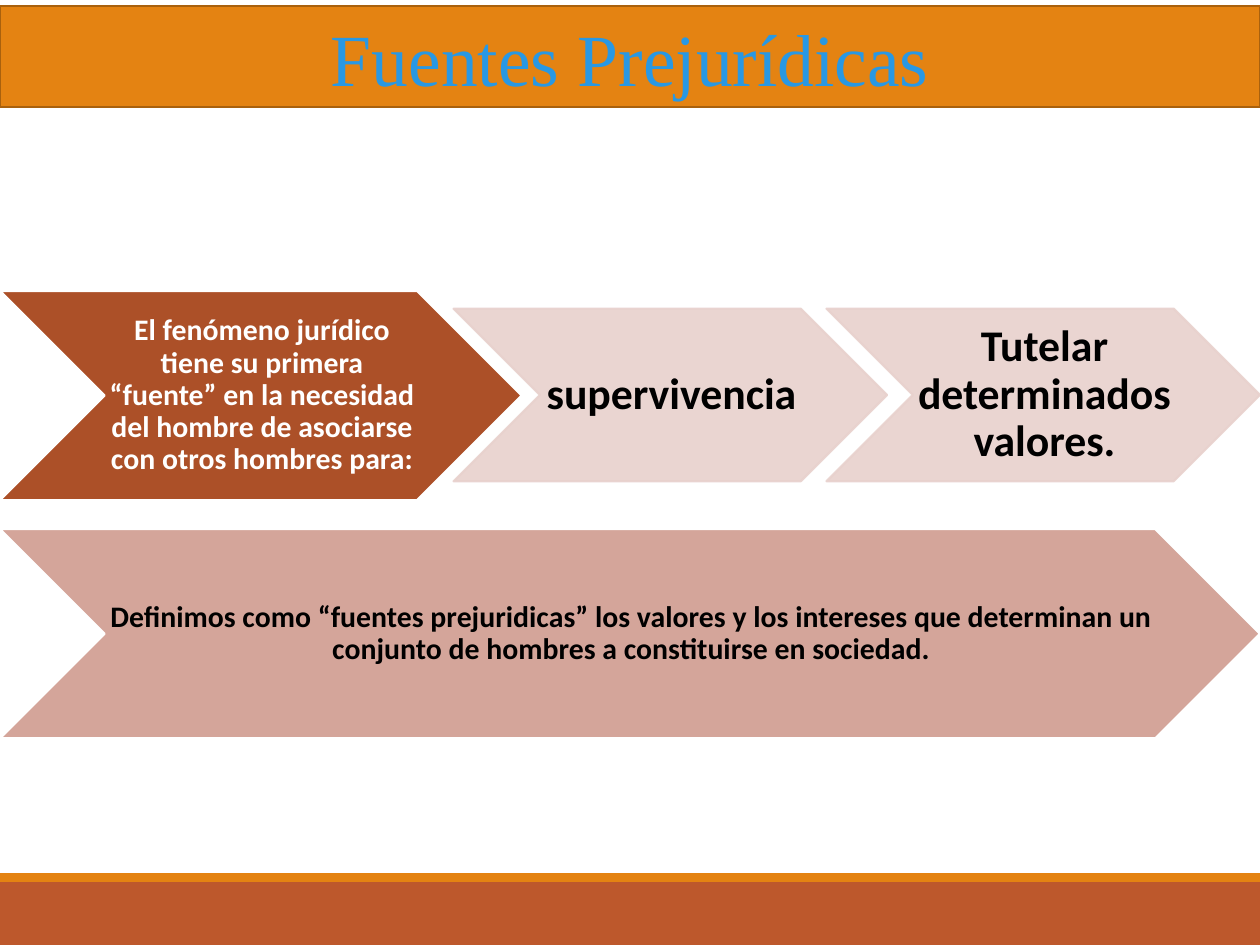
from lxml import etree
from pptx import Presentation
from pptx.dml.color import RGBColor
from pptx.enum.shapes import MSO_SHAPE
from pptx.enum.text import MSO_ANCHOR, MSO_AUTO_SIZE, PP_ALIGN
from pptx.oxml.ns import qn
from pptx.util import Inches, Pt

RECTANGLE, CHEVRON = MSO_SHAPE.RECTANGLE, MSO_SHAPE.CHEVRON
MIDDLE, CENTER = MSO_ANCHOR.MIDDLE, PP_ALIGN.CENTER
NO_AUTOFIT = MSO_AUTO_SIZE.NONE
TITLE_ONLY = 5

ORANGE, RUST, BROWN = "E48312", "BD582C", "AC5028"
DARK_ORANGE, BLUE = "A9610D", "2998E3"
PALE_PINK, PINK = "E8D1CD", "D4A59A"
WHITE, BLACK = "FFFFFF", "000000"


def color(hex_value):
    return RGBColor.from_string(hex_value)


class SlideBuilder:
    """Holds the slide and the style shared by its elements."""

    title_font, body_font = "Times New Roman", "Calibri"
    line_width = Pt(1.25)

    def __init__(self, presentation):
        layout = presentation.slide_layouts[TITLE_ONLY]
        self.slide = presentation.slides.add_slide(layout)

    def paint(self, shape, fill, line=None):
        shape.fill.solid()
        shape.fill.fore_color.rgb = color(fill)
        if line:
            shape.line.color.rgb = color(line)
            shape.line.width = self.line_width
        else:
            shape.line.fill.background()

    def set_text(self, shape, text, size, font, text_color, bold=False):
        frame = shape.text_frame
        frame.text = text
        frame.word_wrap = True
        frame.auto_size = NO_AUTOFIT
        frame.vertical_anchor = MIDDLE
        paragraph = frame.paragraphs[0]
        paragraph.alignment = CENTER
        paragraph.line_spacing = 0.9 if bold else 1.0
        run_font = paragraph.runs[0].font
        run_font.size, run_font.name, run_font.bold = Pt(size), font, bold
        run_font.color.rgb = color(text_color)

    def add_shape(self, kind, left, top, width, height, fill, line=None):
        shape = self.slide.shapes.add_shape(
            kind, Inches(left), Inches(top), Inches(width), Inches(height))
        shape.shadow.inherit = False
        self.paint(shape, fill, line)
        return shape

    def add_title(self, text, top, width, height):
        title = self.slide.shapes.title
        title.left, title.top = Inches(0), Inches(top)
        title.width, title.height = Inches(width), Inches(height)
        self.paint(title, ORANGE, DARK_ORANGE)
        self.set_text(title, text, 42, self.title_font, BLUE)

    def add_chevron(self, text, left, top, width, height, size, fill, line,
                    text_color, opacity=100):
        chevron = self.add_shape(CHEVRON, left, top, width, height, fill, line)
        if opacity < 100:
            for tint in chevron._element.spPr.iter(qn("a:srgbClr")):
                etree.SubElement(tint, qn("a:alpha"), val=str(opacity * 1000))
        # The text sits between the notch and the start of the point.
        label = self.slide.shapes.add_textbox(
            Inches(left + height / 2), Inches(top),
            Inches(width - height), Inches(height))
        frame = label.text_frame
        frame.margin_left, frame.margin_right = Inches(0.02), Inches(0)
        frame.margin_top = frame.margin_bottom = Inches(0.01)
        self.set_text(label, text, size, self.body_font, text_color, bold=True)


def main():
    presentation = Presentation()
    presentation.slide_width, presentation.slide_height = Inches(10), Inches(7.5)
    builder = SlideBuilder(presentation)

    builder.add_shape(RECTANGLE, 0, 7, 10, 0.5, RUST)
    builder.add_shape(RECTANGLE, 0, 6.93, 10, 0.07, ORANGE)
    builder.add_title("Fuentes Prejurídicas", 0.05, 10, 0.8)

    builder.add_chevron(
        "El fenómeno jurídico tiene su primera “fuente” en la necesidad "
        "del hombre de asociarse con otros hombres para:",
        0, 2.31, 4.14, 1.66, 17, BROWN, WHITE, WHITE)
    purposes = ("supervivencia", "Tutelar determinados valores.")
    for index, purpose in enumerate(purposes):
        builder.add_chevron(purpose, 3.6 + 2.96 * index, 2.45, 3.44, 1.37,
                            25, PALE_PINK, PALE_PINK, BLACK, opacity=90)
    builder.add_chevron(
        "Definimos como “fuentes prejuridicas” los valores y los intereses "
        "que determinan un conjunto de hombres a constituirse en sociedad.",
        0, 4.2, 10, 1.66, 17, PINK, WHITE, BLACK)

    presentation.save("out.pptx")


if __name__ == "__main__":
    main()
